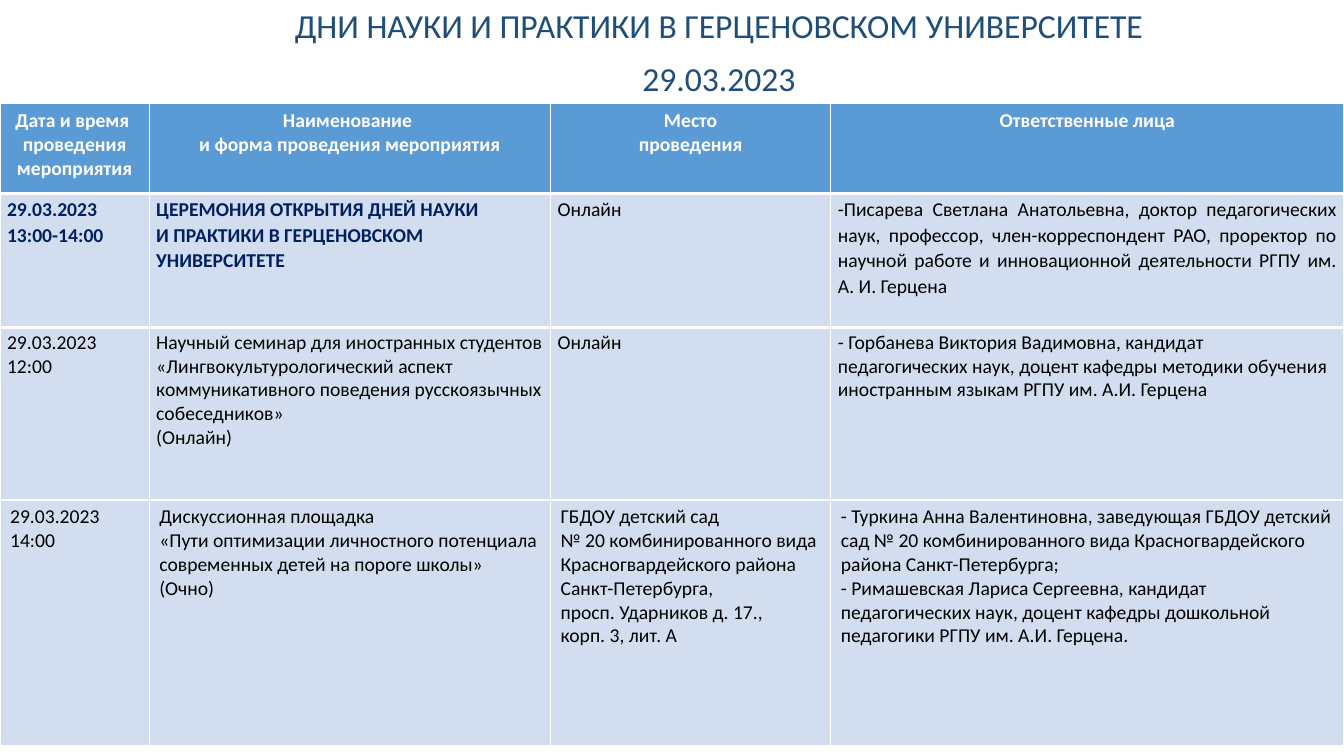
from lxml.etree import SubElement
from pptx import Presentation
from pptx.dml.color import RGBColor
from pptx.enum.text import MSO_ANCHOR, MSO_AUTO_SIZE, PP_ALIGN
from pptx.oxml.ns import qn
from pptx.util import Inches, Pt


def color(value):
    return RGBColor.from_string(value)


def apply(target, values):
    for name, value in values.items():
        setattr(target, name, value)


class SchedulePage:
    font_name = "Calibri"
    title_color = "1F4E79"
    header_fill = "5B9BD5"
    body_fill = "D2DEEF"
    border_color = "FFFFFF"

    def __init__(self, deck):
        self.width = deck.slide_width
        self.height = deck.slide_height
        self.page = deck.slides.add_slide(deck.slide_layouts[5])

    def across(self, percent):
        return round(self.width * percent / 100)

    def down(self, percent):
        return round(self.height * percent / 100)

    def add_lines(self, frame, lines, size, ink, bold, formats, gap=0):
        for index, line in enumerate(lines):
            para = frame.paragraphs[0] if index == 0 else frame.add_paragraph()
            apply(para, {"space_before": Pt(gap if index else 0), **formats})
            span = para.add_run()
            span.text = line
            apply(span.font, {"name": self.font_name, "size": Pt(size), "bold": bold})
            span.font.color.rgb = color(ink)

    def title(self, lines, left, top, width, height):
        box = self.page.shapes.title
        apply(box, {"left": self.across(left), "top": self.down(top),
                    "width": self.across(width), "height": self.down(height)})
        frame = box.text_frame
        apply(frame, {"word_wrap": True, "auto_size": MSO_AUTO_SIZE.NONE,
                      "vertical_anchor": MSO_ANCHOR.TOP,
                      "margin_left": Inches(0.12), "margin_right": Inches(0.1),
                      "margin_top": Inches(0.05), "margin_bottom": Inches(0.05)})
        formats = {"alignment": PP_ALIGN.CENTER, "line_spacing": 1.0}
        self.add_lines(frame, lines, 24, self.title_color, False, formats, 9)

    def borders(self, cell, above, below):
        properties = cell._tc.get_or_add_tcPr()
        widths = {"a:lnL": 1, "a:lnR": 1, "a:lnT": above, "a:lnB": below}
        for index, (tag, width) in enumerate(widths.items()):
            line = SubElement(properties, qn(tag), w=str(Pt(width)))
            fill = SubElement(line, qn("a:solidFill"))
            SubElement(fill, qn("a:srgbClr"), val=self.border_color)
            properties.insert(index, line)

    def table(self, rows, row_styles, columns, heights, top):
        frame = self.page.shapes.add_table(
            len(rows), len(columns), 0, self.down(top),
            self.across(sum(columns)), self.down(sum(heights)))
        table = frame.table
        table.horz_banding = False
        for column, share in zip(table.columns, columns):
            column.width = self.across(share)
        for row, share, texts, style in zip(table.rows, heights, rows, row_styles):
            row.height = self.down(share)
            for index, (cell, lines) in enumerate(zip(row.cells, texts)):
                self.cell(cell, lines, index, **style)

    def cell(self, cell, lines, index, fill, rules, margins, ink="000000",
             strong=0, strong_ink="002060", alignments=(PP_ALIGN.LEFT,) * 4, spacing=1.0):
        side, edge = (Inches(value) for value in margins)
        apply(cell, {"margin_left": side, "margin_right": side,
                     "margin_top": edge, "margin_bottom": edge})
        cell.fill.solid()
        cell.fill.fore_color.rgb = color(fill)
        self.borders(cell, *rules)
        bold = index < strong
        formats = {"alignment": alignments[index], "line_spacing": spacing}
        self.add_lines(cell.text_frame, lines, 14, strong_ink if bold else ink, bold, formats)


ROWS = [
    [["Дата и время ", "проведения мероприятия"],
     ["Наименование ", "и форма проведения мероприятия"],
     ["Место", "проведения"],
     ["Ответственные лица"]],
    [["29.03.2023", "13:00-14:00"],
     ["ЦЕРЕМОНИЯ ОТКРЫТИЯ ДНЕЙ НАУКИ", "И ПРАКТИКИ В ГЕРЦЕНОВСКОМ УНИВЕРСИТЕТЕ"],
     ["Онлайн"],
     ["-Писарева Светлана Анатольевна, доктор педагогических наук, профессор, "
      "член-корреспондент РАО, проректор по научной работе и инновационной "
      "деятельности РГПУ им. А. И. Герцена"]],
    [["29.03.2023", "12:00"],
     ["Научный семинар для иностранных студентов «Лингвокультурологический аспект "
      "коммуникативного поведения русскоязычных собеседников»", "(Онлайн)"],
     ["Онлайн"],
     ["- Горбанева Виктория Вадимовна, кандидат педагогических наук, доцент кафедры "
      "методики обучения иностранным языкам РГПУ им. А.И. Герцена"]],
    [["29.03.2023", "14:00"],
     ["Дискуссионная площадка",
      "«Пути оптимизации личностного потенциала современных детей на пороге школы»",
      "(Очно)"],
     ["ГБДОУ детский сад", "№ 20 комбинированного вида Красногвардейского района",
      "Санкт-Петербурга,", "просп. Ударников д. 17.,", "корп. 3, лит. А"],
     ["- Туркина Анна Валентиновна, заведующая ГБДОУ детский сад № 20 "
      "комбинированного вида Красногвардейского района Санкт-Петербурга;",
      "- Римашевская Лариса Сергеевна, кандидат педагогических наук, доцент кафедры "
      "дошкольной педагогики РГПУ им. А.И. Герцена."]],
]


def main():
    deck = Presentation()
    apply(deck, {"slide_width": Inches(13.33), "slide_height": Inches(7.5)})
    schedule = SchedulePage(deck)
    schedule.title(["ДНИ НАУКИ И ПРАКТИКИ В ГЕРЦЕНОВСКОМ УНИВЕРСИТЕТЕ", "29.03.2023"],
                   left=9.08, top=0, width=88.67, height=13.73)
    wide, narrow = (0.1, 0.05), (0.07, 0.03)
    justified = PP_ALIGN.JUSTIFY
    body = {"fill": schedule.body_fill}
    row_styles = [
        {"fill": schedule.header_fill, "rules": (1, 3), "margins": wide, "strong": 4,
         "strong_ink": "FFFFFF", "alignments": (PP_ALIGN.CENTER,) * 4},
        {**body, "rules": (3, 3), "margins": narrow, "strong": 2, "spacing": 1.07,
         "alignments": (justified, PP_ALIGN.LEFT, justified, justified)},
        {**body, "rules": (3, 1), "margins": narrow},
        {**body, "rules": (1, 1), "margins": wide},
    ]
    schedule.table(ROWS, row_styles, columns=[11.1, 29.86, 20.86, 38.18],
                   heights=[11.87, 17.73, 22.8, 32.53], top=13.73)
    deck.save("out.pptx")


if __name__ == "__main__":
    main()
